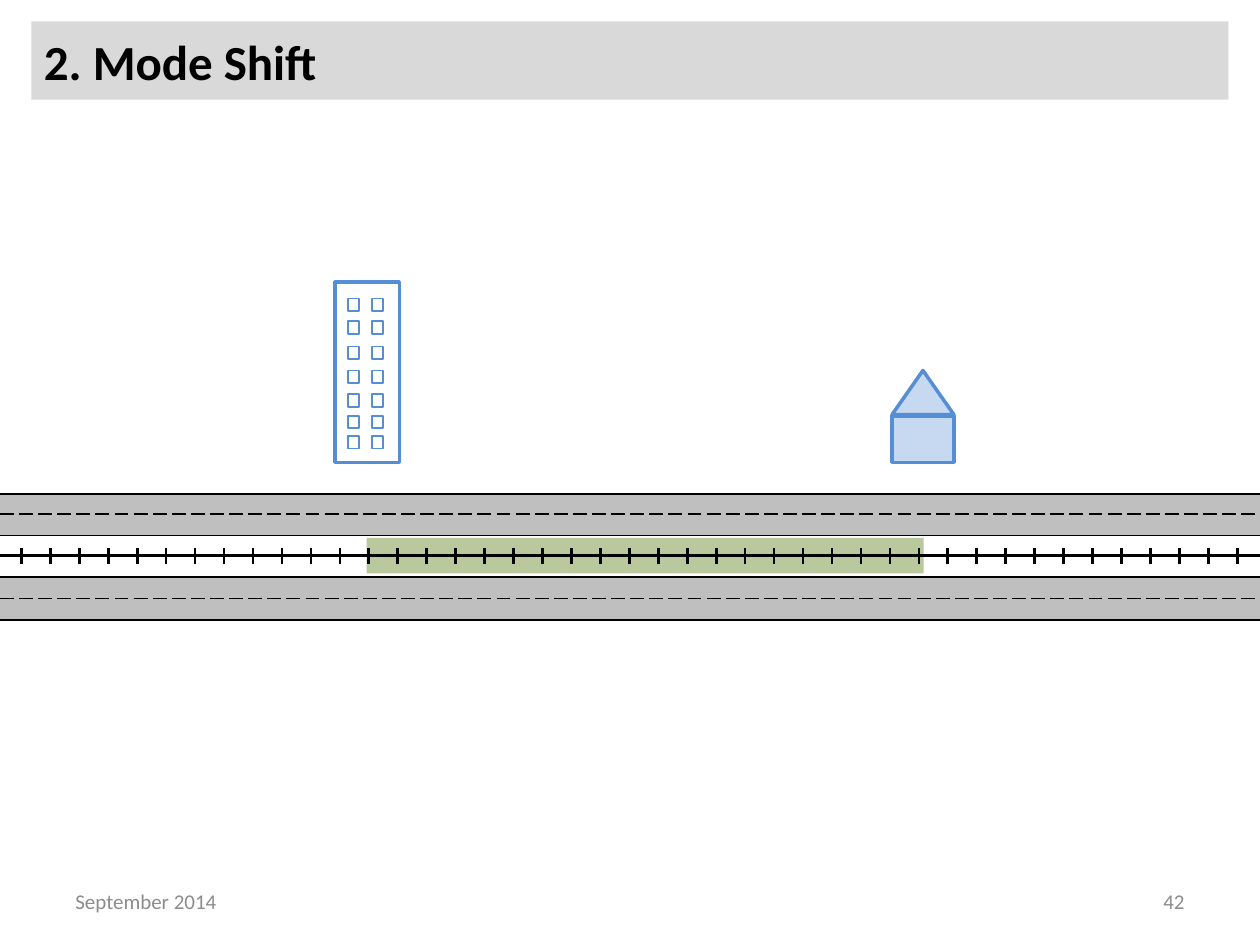
from lxml.etree import SubElement
from pptx import Presentation
from pptx.dml.color import RGBColor
from pptx.enum.dml import MSO_LINE_DASH_STYLE as Dash
from pptx.enum.shapes import MSO_CONNECTOR as Connector, MSO_SHAPE as Shape
from pptx.enum.text import MSO_ANCHOR as Anchor, PP_ALIGN as Align
from pptx.oxml.ns import qn
from pptx.util import Inches, Pt

BLACK = RGBColor(0x00, 0x00, 0x00)
BLUE = RGBColor(0x55, 0x8E, 0xD5)
PALE_BLUE = RGBColor(0xC6, 0xD9, 0xF1)
GREEN = RGBColor(0x77, 0x93, 0x3C)
ROAD_GRAY = RGBColor(0xBF, 0xBF, 0xBF)
TITLE_GRAY = RGBColor(0xD9, 0xD9, 0xD9)
FOOTER_GRAY = RGBColor(0x8C, 0x8C, 0x8C)

PAGE_WIDTH = 10
TRACK_Y = 4.41
TIE_COUNT = 43
FIRST_TIE, LAST_TIE = 0.17, 9.82
WINDOW_COLUMNS = (2.76, 2.95)
WINDOW_ROWS = (2.37, 2.55, 2.75, 2.94, 3.13, 3.3, 3.46)


class Sketch:
    font_name = "Calibri"

    def __init__(self, page):
        self.page = page

    def shape(self, kind, left, top, width, height, fill=None, outline=None, weight=2):
        shape = self.page.shapes.add_shape(
            kind, Inches(left), Inches(top), Inches(width), Inches(height))
        shape.shadow.inherit = False
        if fill is None:
            shape.fill.background()
        else:
            shape.fill.solid()
            shape.fill.fore_color.rgb = fill
        if outline is None:
            shape.line.fill.background()
        else:
            shape.line.color.rgb = outline
            shape.line.width = Pt(weight)
        return shape

    def line(self, x1, y1, x2, y2, weight=1, color=BLACK, dash=None, opacity=None):
        line = self.page.shapes.add_connector(
            Connector.STRAIGHT, Inches(x1), Inches(y1), Inches(x2), Inches(y2))
        line.line.color.rgb = color
        line.line.width = Pt(weight)
        if dash is not None:
            line.line.dash_style = dash
        properties = line._element.spPr
        SubElement(properties, qn("a:effectLst"))
        if opacity is not None:
            tint = properties.find(".//" + qn("a:srgbClr"))
            SubElement(tint, qn("a:alpha"), val=str(opacity * 1000))

    def label(self, box, text, size, color, bold=False, align=Align.LEFT):
        frame = box.text_frame
        frame.text = text
        frame.word_wrap = True
        frame.vertical_anchor = Anchor.MIDDLE
        para = frame.paragraphs[0]
        para.alignment = align
        font = para.runs[0].font
        font.name = self.font_name
        font.size = Pt(size)
        font.bold = bold
        font.color.rgb = color

    def footer(self, left, text, align):
        box = self.page.shapes.add_textbox(
            Inches(left), Inches(6.95), Inches(2.33), Inches(0.4))
        self.label(box, text, 12, FOOTER_GRAY, align=align)

    def title(self, text):
        bar = self.shape(Shape.RECTANGLE, 0.25, 0.17, 9.5, 0.62, TITLE_GRAY)
        self.label(bar, text, 28, BLACK, bold=True)

    def road(self, top, middle, bottom):
        self.shape(Shape.RECTANGLE, 0, top, PAGE_WIDTH, bottom - top, ROAD_GRAY)
        for y, dash in ((top, None), (middle, Dash.LONG_DASH), (bottom, None)):
            self.line(0, y, PAGE_WIDTH, y, dash=dash)

    def track(self):
        self.line(0, TRACK_Y, PAGE_WIDTH, TRACK_Y, 1.5)
        step = (LAST_TIE - FIRST_TIE) / (TIE_COUNT - 1)
        for index in range(TIE_COUNT):
            x = FIRST_TIE + index * step
            self.line(x, 4.48, x, 4.35, 1.5)

    def tower(self):
        self.shape(Shape.RECTANGLE, 2.66, 2.24, 0.51, 1.43, outline=BLUE)
        for top in WINDOW_ROWS:
            for left in WINDOW_COLUMNS:
                self.shape(Shape.RECTANGLE, left, top, 0.09, 0.1, outline=BLUE, weight=1)

    def house(self):
        self.shape(Shape.RECTANGLE, 7.08, 3.3, 0.49, 0.37, PALE_BLUE, BLUE)
        self.shape(Shape.ISOSCELES_TRIANGLE, 7.08, 2.94, 0.49, 0.35, PALE_BLUE, BLUE)


def main():
    deck = Presentation()
    deck.slide_width = Inches(PAGE_WIDTH)
    deck.slide_height = Inches(7.5)
    sketch = Sketch(deck.slides.add_slide(deck.slide_layouts[6]))
    sketch.tower()
    sketch.title("2. Mode Shift")
    sketch.line(2.91, TRACK_Y, 7.33, TRACK_Y, 20.25, GREEN, opacity=50)
    sketch.house()
    sketch.road(3.92, 4.08, 4.25)
    sketch.road(4.58, 4.75, 4.92)
    sketch.track()
    sketch.footer(0.5, "September 2014", Align.LEFT)
    sketch.footer(7.17, "42", Align.RIGHT)
    deck.save("out.pptx")


if __name__ == "__main__":
    main()
